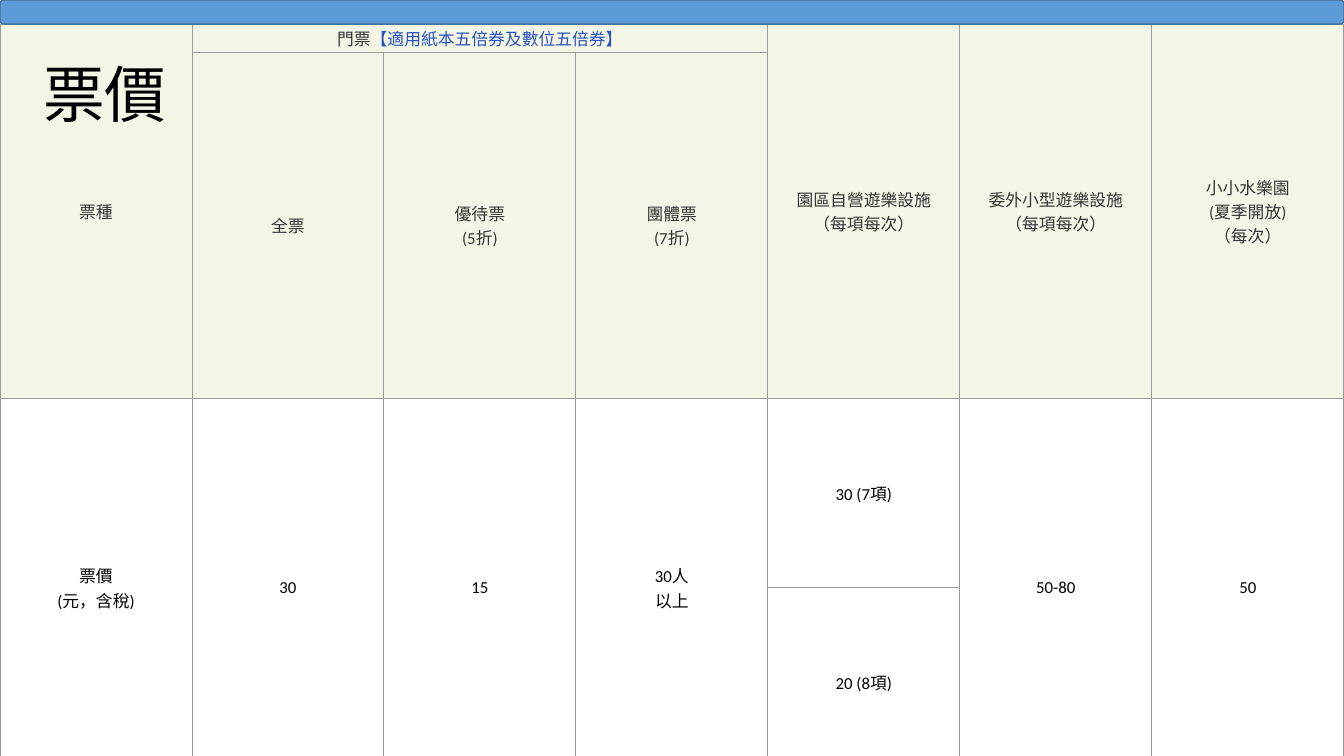
from lxml.etree import SubElement
from pptx import Presentation
from pptx.dml.color import RGBColor
from pptx.enum.shapes import MSO_SHAPE
from pptx.enum.text import MSO_ANCHOR, PP_ALIGN
from pptx.oxml.ns import qn
from pptx.util import Inches, Pt

BLACK = RGBColor(0x00, 0x00, 0x00)
DARK_GRAY = RGBColor(0x34, 0x34, 0x34)
LINK_BLUE = RGBColor(0x2A, 0x52, 0xBE)
HEADER_FILL = RGBColor(0xF3, 0xF6, 0xE7)
GRID = RGBColor(0x9C, 0x9C, 0x9C)
BAR_FILL = RGBColor(0x5B, 0x9B, 0xD5)
BAR_LINE = RGBColor(0x43, 0x73, 0x9E)
FONT = "Calibri"

SLIDE_WIDTH, SLIDE_HEIGHT = 13.33, 7.5
BAR_HEIGHT = 0.24
ROW_HEIGHTS = [0.24, 3.43, 1.88, 1.88]
HEADER_ROWS = 2
CELL_MARGIN = 0.02

TITLE = "票價"
VOUCHER_NOTE = "【適用紙本五倍券及數位五倍券】"
# None marks a cell covered by a merge
PRICES = [
    ["票種", "門票", None, None, "園區自營遊樂設施\n（每項每次）",
     "委外小型遊樂設施\n（每項每次）", "小小水樂園\n(夏季開放)\n（每次）"],
    [None, "全票", "優待票\n(5折)", "團體票\n(7折)", None, None, None],
    ["票價\n(元，含稅)", "30", "15", "30人\n以上", "30 (7項)", "50-80", "50"],
    [None, None, None, None, "20 (8項)", None, None],
]
# (first row, first column, last row, last column)
MERGES = [(0, 1, 0, 3)]
MERGES += [(0, column, 1, column) for column in (0, 4, 5, 6)]
MERGES += [(2, column, 3, column) for column in (0, 1, 2, 3, 5, 6)]


def set_borders(cell):
    properties = cell._tc.get_or_add_tcPr()
    for index, side in enumerate(("a:lnL", "a:lnR", "a:lnT", "a:lnB")):
        line = SubElement(properties, qn(side), w=str(Pt(0.75)))
        fill = SubElement(line, qn("a:solidFill"))
        SubElement(fill, qn("a:srgbClr"), val=str(GRID))
        properties.insert(index, line)  # borders come before the fill


def set_font(para, size, color):
    para.font.name = FONT
    para.font.size = Pt(size)
    para.font.color.rgb = color


def style_cell(cell, is_header):
    cell.vertical_anchor = MSO_ANCHOR.MIDDLE
    cell.margin_left = cell.margin_right = Inches(CELL_MARGIN)
    cell.margin_top = cell.margin_bottom = Inches(CELL_MARGIN)
    if is_header:
        cell.fill.solid()
        cell.fill.fore_color.rgb = HEADER_FILL
    else:
        cell.fill.background()
    set_borders(cell)
    para = cell.text_frame.paragraphs[0]
    para.alignment = PP_ALIGN.CENTER
    set_font(para, 12, DARK_GRAY if is_header else BLACK)


def add_price_table(page):
    column_count = len(PRICES[0])
    frame = page.shapes.add_table(
        len(PRICES), column_count, 0, Inches(BAR_HEIGHT),
        Inches(SLIDE_WIDTH), Inches(sum(ROW_HEIGHTS)))
    table = frame.table
    table.first_row = table.horz_banding = False
    for column in table.columns:
        column.width = Inches(SLIDE_WIDTH / column_count)
    for row, height in zip(table.rows, ROW_HEIGHTS):
        row.height = Inches(height)

    for row_index, texts in enumerate(PRICES):
        for column_index, text in enumerate(texts):
            cell = table.cell(row_index, column_index)
            style_cell(cell, row_index < HEADER_ROWS)
            if text:
                # a vertical tab becomes a line break
                cell.text_frame.paragraphs[0].text = text.replace("\n", "\v")

    note = table.cell(0, 1).text_frame.paragraphs[0].add_run()
    note.text = VOUCHER_NOTE
    note.font.color.rgb = LINK_BLUE
    for top, left, bottom, right in MERGES:
        table.cell(top, left).merge(table.cell(bottom, right))


def add_title(page):
    box = page.shapes.add_textbox(
        Inches(0.33), Inches(0.24), Inches(11.5), Inches(1.45))
    box.text_frame.word_wrap = True
    box.text_frame.vertical_anchor = MSO_ANCHOR.MIDDLE
    para = box.text_frame.paragraphs[0]
    para.text = TITLE
    para.line_spacing = 0.9
    set_font(para, 44, BLACK)


def add_top_bar(page):
    bar = page.shapes.add_shape(
        MSO_SHAPE.ROUNDED_RECTANGLE, 0, 0,
        Inches(SLIDE_WIDTH), Inches(BAR_HEIGHT))
    bar.shadow.inherit = False
    bar.fill.solid()
    bar.fill.fore_color.rgb = BAR_FILL
    bar.line.color.rgb = BAR_LINE
    bar.line.width = Pt(1)


def main():
    deck = Presentation()
    deck.slide_width = Inches(SLIDE_WIDTH)
    deck.slide_height = Inches(SLIDE_HEIGHT)
    page = deck.slides.add_slide(deck.slide_layouts[6])
    add_price_table(page)
    add_title(page)
    add_top_bar(page)
    deck.save("out.pptx")


if __name__ == "__main__":
    main()
